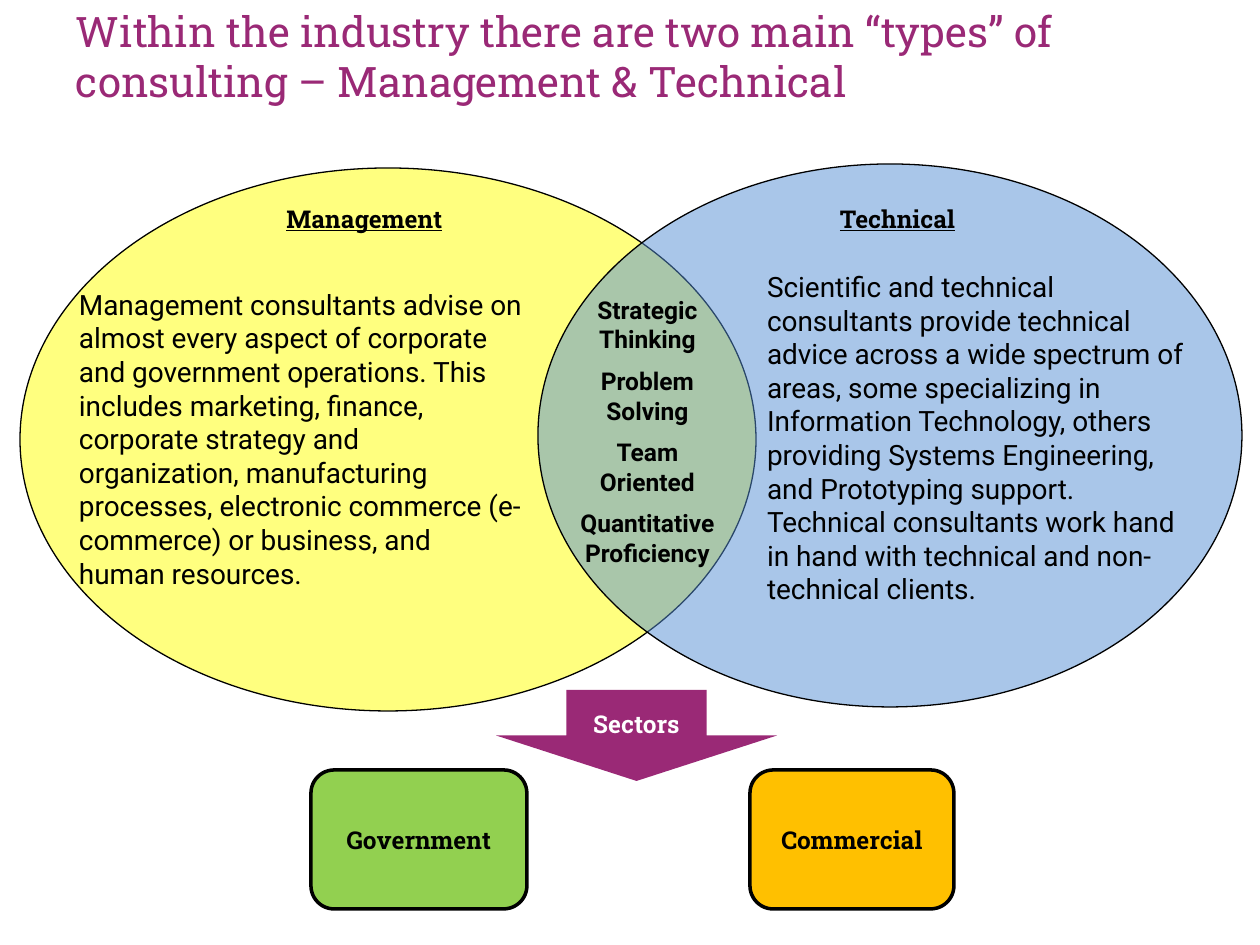
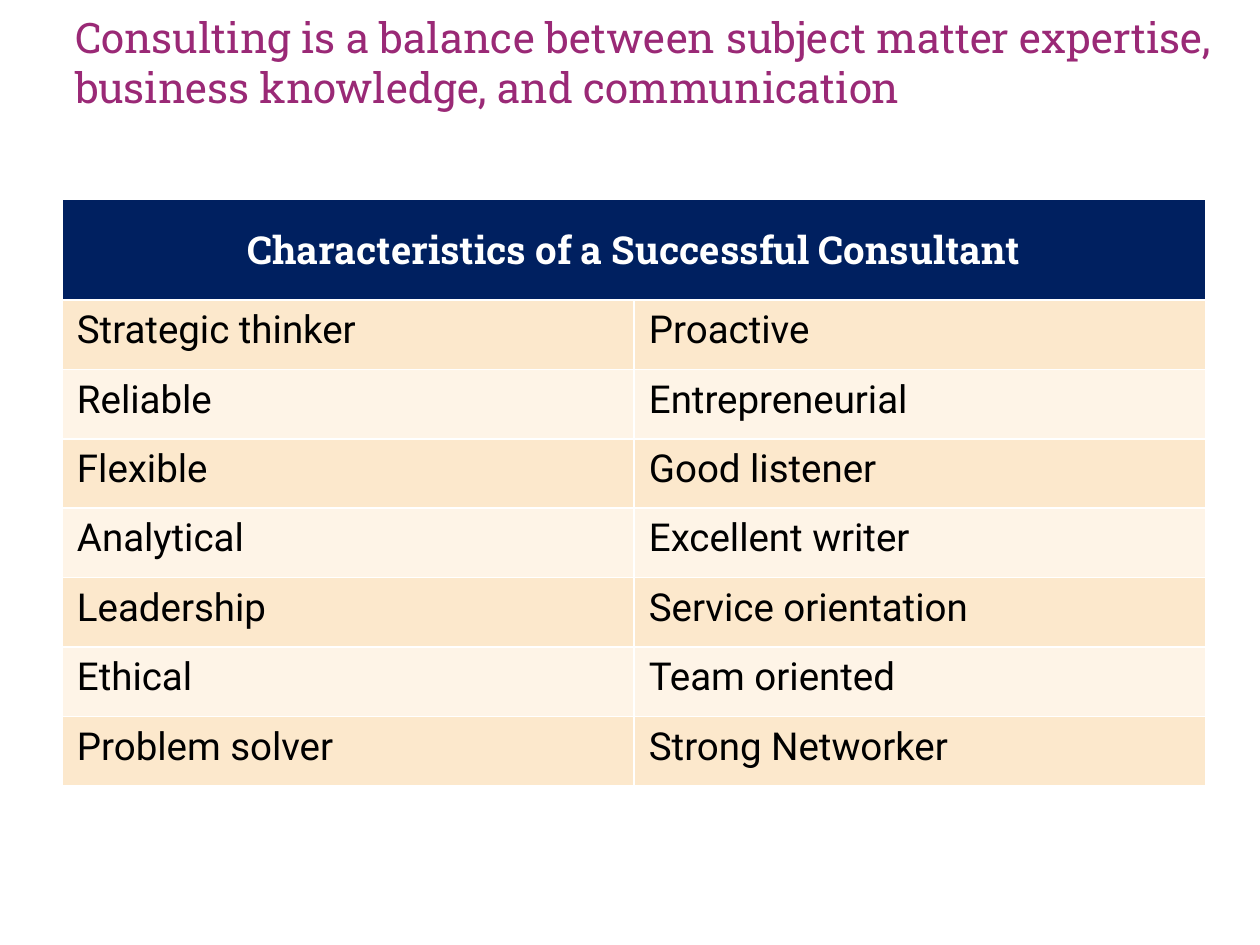
from dataclasses import dataclass

from lxml import etree
from pptx import Presentation
from pptx import util as u
from pptx.dml.color import RGBColor
from pptx.enum import shapes, text
from pptx.oxml import ns

PX_PER_INCH = 126


def px(n):
    return round(n * u.Inches(1) / PX_PER_INCH)


@dataclass(frozen=True)
class Theme:
    head_font: str = "Roboto Slab"
    body_font: str = "Roboto"
    title: str = "9A2976"
    ink: str = "000000"
    paper: str = "FFFFFF"
    management: str = "FFFF00"
    technical: str = "558ED5"
    government: str = "92D050"
    commercial: str = "FFC000"
    table_head: str = "002060"
    bands: tuple = ("FCE8CC", "FEF4E7")
    title_size: int = 24
    table_size: int = 22
    body_size: int = 16
    label_size: int = 14


@dataclass(frozen=True)
class Box:
    x: int
    y: int
    w: int
    h: int

    def inner(self, dx, dy, w, h):
        return Box(self.x + dx, self.y + dy, w, h)

    def emu(self):
        return [px(n) for n in (self.x, self.y, self.w, self.h)]


THEME = Theme()
MIDDLE = text.MSO_ANCHOR.MIDDLE
TOP = text.MSO_ANCHOR.TOP
CENTER = text.PP_ALIGN.CENTER
LEFT = text.PP_ALIGN.LEFT


def rgb(value):
    return RGBColor.from_string(value)


def write(tf, lines, size, font=THEME.body_font, color=THEME.ink, bold=False,
          underline=False, align=LEFT, gap=0):
    """Fill a text frame, one paragraph per line, with gap points between."""
    for i, line in enumerate(lines):
        p = tf.paragraphs[0] if i == 0 else tf.add_paragraph()
        p.text = line
        p.alignment = align
        p.space_before = u.Pt(gap if i else 0)
        p.font.name, p.font.size = font, u.Pt(size)
        p.font.bold, p.font.underline = bold, underline
        p.font.color.rgb = rgb(color)


def frame(tf, anchor, inset_x, inset_y):
    tf.word_wrap = True
    tf.auto_size = text.MSO_AUTO_SIZE.NONE
    tf.vertical_anchor = anchor
    tf.margin_left = tf.margin_right = px(inset_x)
    tf.margin_top = tf.margin_bottom = px(inset_y)


def add_text(parent, box, lines, size, anchor=TOP, **style):
    tf = parent.add_textbox(*box.emu()).text_frame
    frame(tf, anchor, 5, 6)
    write(tf, lines, size, **style)


def add_filled(parent, kind, box, fill, line_width=0, alpha=None):
    sp = parent.add_shape(kind, *box.emu())
    sp.shadow.inherit = False
    sp.fill.solid()
    sp.fill.fore_color.rgb = rgb(fill)
    if alpha:
        color = sp.fill._xPr.find(".//" + ns.qn("a:srgbClr"))
        etree.SubElement(color, ns.qn("a:alpha"), val=str(alpha * 1000))
    if line_width:
        sp.line.color.rgb = rgb(THEME.ink)
        sp.line.width = u.Pt(line_width)
    else:
        sp.line.fill.background()
    return sp


def add_label(sp, label, color=THEME.ink):
    frame(sp.text_frame, MIDDLE, 9, 5)
    write(sp.text_frame, [label], THEME.label_size, THEME.head_font, color,
          bold=True, align=CENTER)


def title_slide(prs, title, box):
    """Add a title-only slide with its title placed in box."""
    s = prs.slides.add_slide(prs.slide_layouts[5])
    sp = s.shapes.title
    sp.left, sp.top, sp.width, sp.height = box.emu()
    frame(sp.text_frame, MIDDLE, 13, 6)
    write(sp.text_frame, [title], THEME.title_size, THEME.head_font, THEME.title)
    return s


def venn(s, box):
    group = s.shapes.add_group_shape().shapes
    circles = [
        (box.inner(0, 4, 736, 543), THEME.management),
        (box.inner(518, 0, 704, 543), THEME.technical),
    ]
    for circle, color in circles:
        add_filled(group, shapes.MSO_SHAPE.OVAL, circle, color, 0.75, alpha=50)

    for heading, dx in (("Management", 182), ("Technical", 715)):
        add_text(group, box.inner(dx, 34, 325, 49), [heading], THEME.label_size,
                 font=THEME.head_font, bold=True, underline=True, align=CENTER)

    descriptions = [
        (box.inner(742, 114, 435, 319),
         "Scientific and technical consultants provide technical advice across a "
         "wide spectrum of areas, some specializing in Information Technology, "
         "others providing Systems Engineering, and Prototyping support. Technical "
         "consultants work hand in hand with technical and non-technical clients."),
        (box.inner(54, 132, 454, 285),
         "Management consultants advise on almost every aspect of corporate and "
         "government operations. This includes marketing, finance, corporate "
         "strategy and organization, manufacturing processes, electronic commerce "
         "(e-commerce) or business, and human resources."),
    ]
    for area, description in descriptions:
        add_text(group, area, [description], THEME.body_size, MIDDLE)

    shared_skills = ["Strategic Thinking", "Problem Solving", "Team Oriented",
                     "Quantitative Proficiency"]
    add_text(group, box.inner(552, 125, 151, 295), shared_skills,
             THEME.label_size, bold=True, align=CENTER, gap=7)


def sectors(s, box):
    arrow = add_filled(s.shapes, shapes.MSO_SHAPE.DOWN_ARROW,
                       box.inner(185, 0, 281, 91), THEME.title)
    add_label(arrow, "Sectors", THEME.paper)
    for label, dx, width, color in (("Government", 0, 216, THEME.government),
                                    ("Commercial", 439, 204, THEME.commercial)):
        sector = add_filled(s.shapes, shapes.MSO_SHAPE.ROUNDED_RECTANGLE,
                            box.inner(dx, 80, width, 139), color, 2)
        add_label(sector, label)


def style_cell(cell, fill, anchor):
    """Give a cell white borders, its fill and its margins."""
    tc_pr = cell._tc.get_or_add_tcPr()
    for side in "LRTB":
        ln = etree.SubElement(tc_pr, ns.qn(f"a:ln{side}"), w=str(u.Pt(1)))
        solid = etree.SubElement(ln, ns.qn("a:solidFill"))
        etree.SubElement(solid, ns.qn("a:srgbClr"), val=THEME.paper)
    cell.fill.solid()
    cell.fill.fore_color.rgb = rgb(fill)
    cell.vertical_anchor = anchor
    cell.margin_left = cell.margin_right = px(15)
    cell.margin_top = cell.margin_bottom = px(8)


def characteristics_table(s, box):
    heading = "Characteristics of a Successful Consultant"
    traits = [
        ("Strategic thinker", "Proactive"),
        ("Reliable", "Entrepreneurial"),
        ("Flexible", "Good listener"),
        ("Analytical", "Excellent writer"),
        ("Leadership", "Service orientation"),
        ("Ethical", "Team oriented"),
        ("Problem solver", "Strong Networker"),
    ]
    head_height = 101
    table = s.shapes.add_table(len(traits) + 1, 2, *box.emu()).table
    table.first_row = table.horz_banding = False
    for column in table.columns:
        column.width = px(box.w / 2)
    for i, row in enumerate(table.rows):
        row.height = px((box.h - head_height) / len(traits) if i else head_height)

    for cell in table.rows[0].cells:
        style_cell(cell, THEME.table_head, MIDDLE)
    head = table.cell(0, 0)
    head.merge(table.cell(0, 1))
    write(head.text_frame, [heading], THEME.table_size, THEME.head_font,
          THEME.paper, bold=True, align=CENTER)

    for i, pair in enumerate(traits):
        for j, trait in enumerate(pair):
            cell = table.cell(i + 1, j)
            style_cell(cell, THEME.bands[i % 2], TOP)
            write(cell.text_frame, [trait], THEME.table_size)


def main():
    prs = Presentation()
    prs.slide_width, prs.slide_height = u.Inches(10), u.Inches(7.5)

    s = title_slide(prs, "Within the industry there are two main “types” of "
                    "consulting – Management & Technical", Box(63, 34, 1134, 44))
    venn(s, Box(20, 164, 1222, 547))
    sectors(s, Box(311, 690, 643, 219))

    s = title_slide(prs, "Consulting is a balance between subject matter expertise, "
                    "business knowledge, and communication", Box(62, 13, 1198, 97))
    characteristics_table(s, Box(62, 199, 1144, 587))

    prs.save("out.pptx")


if __name__ == "__main__":
    main()
